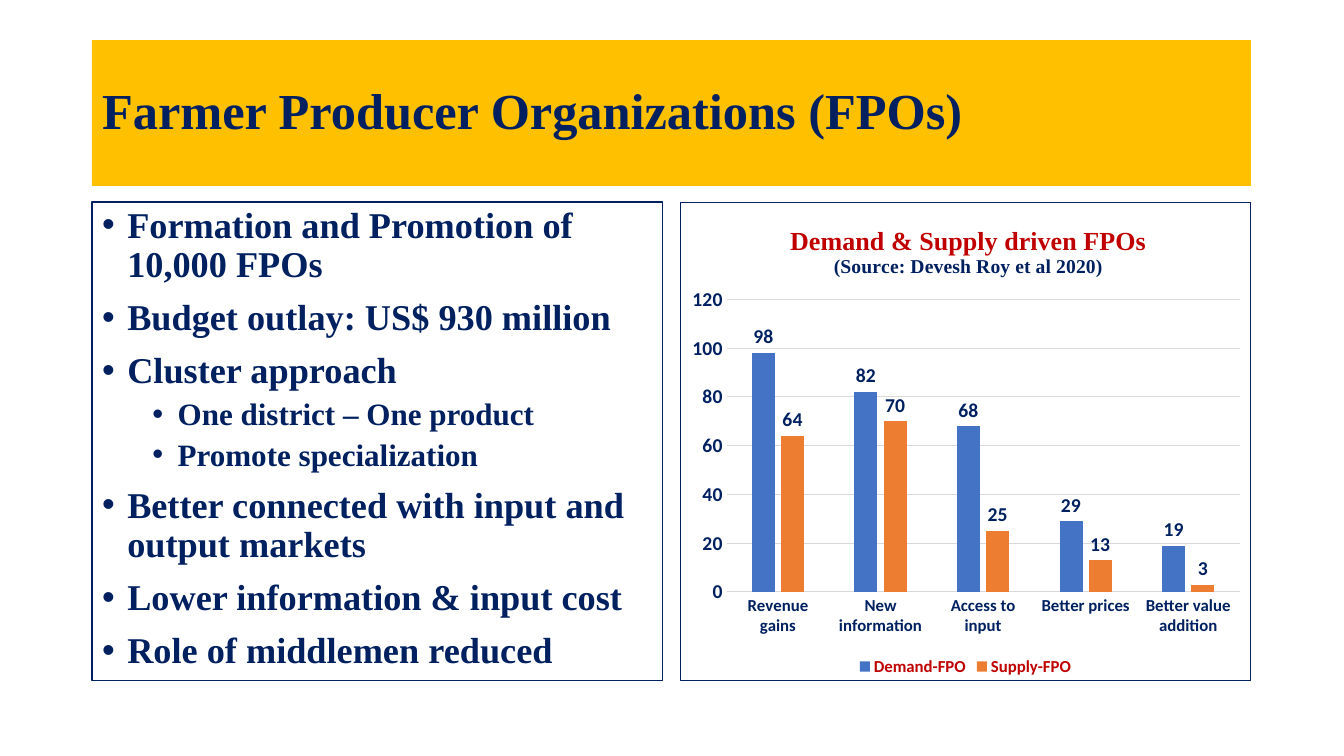
"""Build the slide on Farmer Producer Organizations with its key points and chart."""
from dataclasses import dataclass

from lxml import etree
from pptx import Presentation, util as u
from pptx.chart.data import CategoryChartData
from pptx.dml.color import RGBColor
from pptx.enum import chart as c, text as t
from pptx.oxml import ns, parse_xml

TITLE = "Farmer Producer Organizations (FPOs)"
POINTS = [
    (0, "Formation and Promotion of 10,000 FPOs"),
    (0, "Budget outlay: US$ 930 million"),
    (0, "Cluster approach"),
    (1, "One district – One product"),
    (1, "Promote specialization"),
    (0, "Better connected with input and output markets"),
    (0, "Lower information & input cost"),
    (0, "Role of middlemen reduced"),
]
CATEGORIES = ["Revenue gains", "New information", "Access to input",
              "Better prices", "Better value addition"]
SERIES = {"Demand-FPO": (98, 82, 68, 29, 19), "Supply-FPO": (64, 70, 25, 13, 3)}


@dataclass(frozen=True)
class Theme:
    navy: str = "002060"
    red: str = "C00000"
    gold: str = "FFC000"
    grid: str = "D9D9D9"
    series: tuple = ("4472C4", "ED7D31")
    serif: str = "Times New Roman"
    sans: str = "Calibri"
    title: float = 36
    levels: tuple = (25.9, 22.2)
    chart_title: float = 18.6
    values: float = 14
    labels: float = 12
    line: float = 0.75


THEME = Theme()
CHART_TITLE = [
    ("Demand & Supply driven FPOs", THEME.chart_title, THEME.red),
    ("(Source: Devesh Roy et al 2020)", THEME.values, THEME.navy),
]
SCALE = 914400 / 100.8
SLIDE_WIDTH, SLIDE_HEIGHT = 1344, 756
LEFT, WIDTH, GAP = 92, 1159, 17
TITLE_TOP, TITLE_HEIGHT = 40, 146
PANEL_TOP, PANEL_HEIGHT = 202, 479
PANEL_WIDTH = (WIDTH - GAP) // 2
CHART_LEFT = LEFT + PANEL_WIDTH + GAP
PLOT = {"x": 46, "y": 97, "w": 514, "h": 293}
CHART_TITLE_PLACE = {"x": 107, "y": 20}


def px(length):
    return u.Emu(round(length * SCALE))


def apply(target, values):
    for name, value in values.items():
        setattr(target, name, value)


def style_font(font, size, color, name):
    apply(font, {"size": u.Pt(size), "bold": True, "name": name})
    font.color.rgb = RGBColor.from_string(color)


def style_line(line, color):
    line.color.rgb = RGBColor.from_string(color)
    line.width = u.Pt(THEME.line)


def place(shape, left, top, width, height):
    apply(shape, {"left": px(left), "top": px(top), "width": px(width), "height": px(height)})


def add_bullet(paragraph, level):
    properties = paragraph._p.get_or_add_pPr()
    indent = u.Inches(0.25)
    properties.set("marL", str(indent * (1 + 2 * level)))
    properties.set("indent", str(-indent))
    etree.SubElement(properties, ns.qn("a:buFont")).set("typeface", "Arial")
    etree.SubElement(properties, ns.qn("a:buChar")).set("char", "•")


def set_layout(parent, position, box):
    for old in parent.findall(ns.qn("c:layout")):
        parent.remove(old)
    layout = etree.Element(ns.qn("c:layout"))
    manual = etree.SubElement(layout, ns.qn("c:manualLayout"))
    modes = {"xMode": "edge", "yMode": "edge"}
    if "w" in box:
        modes = {"layoutTarget": "inner", **modes}
    totals = {"x": PANEL_WIDTH, "y": PANEL_HEIGHT, "w": PANEL_WIDTH, "h": PANEL_HEIGHT}
    fractions = {name: str(round(value / totals[name], 3)) for name, value in box.items()}
    for name, value in {**modes, **fractions}.items():
        etree.SubElement(manual, ns.qn(f"c:{name}")).set("val", value)
    parent.insert(position, layout)


def fill_title(shape):
    place(shape, LEFT, TITLE_TOP, WIDTH, TITLE_HEIGHT)
    shape.fill.solid()
    shape.fill.fore_color.rgb = RGBColor.from_string(THEME.gold)
    frame = shape.text_frame
    apply(frame, {"text": TITLE, "word_wrap": True, "auto_size": t.MSO_AUTO_SIZE.NONE,
                  "vertical_anchor": t.MSO_ANCHOR.MIDDLE})
    paragraph = frame.paragraphs[0]
    apply(paragraph, {"alignment": t.PP_ALIGN.LEFT, "line_spacing": 0.9})
    style_font(paragraph.runs[0].font, THEME.title, THEME.navy, THEME.serif)


def fill_points(shape):
    place(shape, LEFT, PANEL_TOP, PANEL_WIDTH, PANEL_HEIGHT)
    style_line(shape.line, THEME.navy)
    frame = shape.text_frame
    frame.text = "\n".join(words for _, words in POINTS)
    apply(frame, {"word_wrap": True, "auto_size": t.MSO_AUTO_SIZE.NONE})
    for paragraph, (level, _) in zip(frame.paragraphs, POINTS):
        apply(paragraph, {"level": level, "line_spacing": 0.9, "space_after": u.Pt(0),
                          "space_before": u.Pt((10, 5)[level])})
        add_bullet(paragraph, level)
        style_font(paragraph.runs[0].font, THEME.levels[level], THEME.navy, THEME.serif)


def fill_chart_title(chart):
    frame = chart.chart_title.text_frame
    frame.text = "\n".join(words for words, _, _ in CHART_TITLE)
    for paragraph, (_, size, color) in zip(frame.paragraphs, CHART_TITLE):
        style_font(paragraph.runs[0].font, size, color, THEME.serif)
    set_layout(chart.chart_title._element, 1, CHART_TITLE_PLACE)


def add_border(chart):
    outline = parse_xml(
        f'<c:spPr {ns.nsdecls("c", "a")}><a:noFill/><a:ln w="{u.Pt(THEME.line)}"><a:solidFill>'
        f'<a:srgbClr val="{THEME.navy}"/></a:solidFill></a:ln></c:spPr>')
    chart._chartSpace.find(ns.qn("c:chart")).addnext(outline)


def add_fpo_chart(slide):
    data = CategoryChartData()
    data.categories = CATEGORIES
    for name, values in SERIES.items():
        data.add_series(name, values)
    chart = slide.shapes.add_chart(
        c.XL_CHART_TYPE.COLUMN_CLUSTERED, px(CHART_LEFT), px(PANEL_TOP),
        px(PANEL_WIDTH), px(PANEL_HEIGHT), data).chart
    apply(chart.font, {"size": u.Pt(10), "name": THEME.sans})
    fill_chart_title(chart)
    chart.has_legend = True
    apply(chart.legend, {"position": c.XL_LEGEND_POSITION.BOTTOM, "include_in_layout": False})
    style_font(chart.legend.font, THEME.labels, THEME.red, THEME.sans)

    for axis, size in ((chart.category_axis, THEME.labels), (chart.value_axis, THEME.values)):
        apply(axis, {"major_tick_mark": c.XL_TICK_MARK.NONE,
                     "minor_tick_mark": c.XL_TICK_MARK.NONE})
        style_font(axis.tick_labels.font, size, THEME.navy, THEME.sans)
    style_line(chart.category_axis.format.line, THEME.grid)
    axis = chart.value_axis
    apply(axis, {"minimum_scale": 0, "maximum_scale": 120, "major_unit": 20,
                 "has_major_gridlines": True})
    axis.format.line.fill.background()
    style_line(axis.major_gridlines.format.line, THEME.grid)

    plot = chart.plots[0]
    apply(plot, {"gap_width": 219, "overlap": -27, "vary_by_categories": False})
    for series, color in zip(plot.series, THEME.series):
        series.format.fill.solid()
        series.format.fill.fore_color.rgb = RGBColor.from_string(color)
        labels = series.data_labels
        apply(labels, {"show_value": True, "position": c.XL_LABEL_POSITION.OUTSIDE_END})
        style_font(labels.font, THEME.values, THEME.navy, THEME.sans)
    set_layout(chart._chartSpace.find(".//" + ns.qn("c:plotArea")), 0, PLOT)
    add_border(chart)


def main():
    presentation = Presentation()
    apply(presentation, {"slide_width": px(SLIDE_WIDTH), "slide_height": px(SLIDE_HEIGHT)})
    slide = presentation.slides.add_slide(presentation.slide_layouts[1])
    fill_title(slide.shapes.title)
    fill_points(slide.placeholders[1])
    add_fpo_chart(slide)
    presentation.save("out.pptx")


if __name__ == "__main__":
    main()
